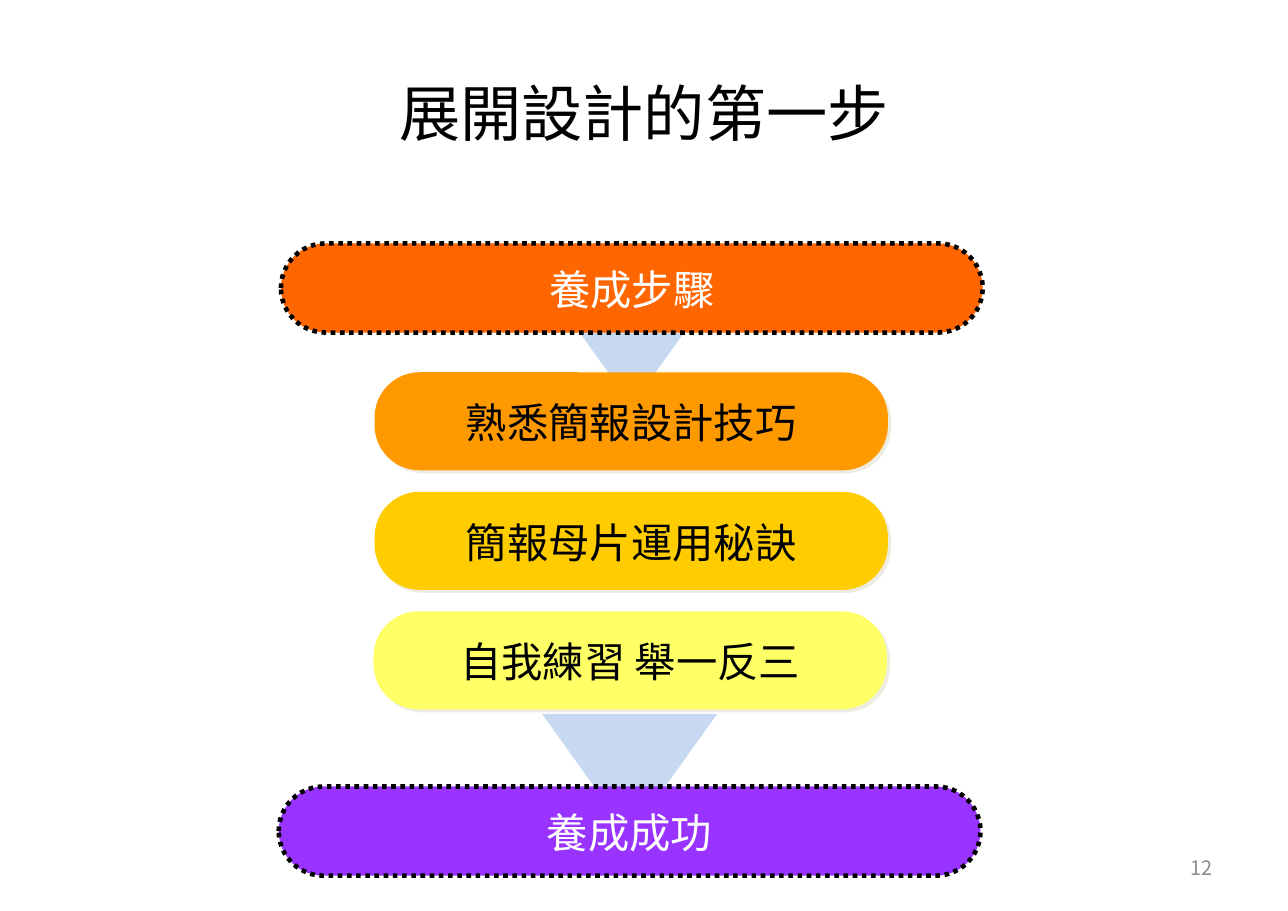
from lxml.etree import SubElement
from pptx import Presentation
from pptx.dml.color import RGBColor
from pptx.enum.dml import MSO_LINE
from pptx.enum.shapes import MSO_SHAPE
from pptx.enum.text import MSO_ANCHOR, PP_ALIGN
from pptx.oxml.ns import qn
from pptx.util import Inches, Pt

FONT = "Noto Sans CJK SC"
WIDTH, HEIGHT = Inches(11.69), Inches(8.27)
COLORS = {
    "black": "000000", "white": "FFFFFF", "gray": "8C8C8C",
    "arrow": "C6D9F1", "shadow": "EEECE1", "start": "FF6600",
    "skills": "FF9900", "master": "FFCC00", "practice": "FFFF66",
    "success": "9933FF",
}
STEPS = [
    ("熟悉簡報設計技巧", "skills", 29.08),
    ("簡報母片運用秘訣", "master", 29.08),
    ("自我練習 舉一反三", "practice", 29),
]
STEP_TOP, STEP_PITCH = 40.87, 13.12


def rgb(name):
    return RGBColor.from_string(COLORS[name])


def place(x, y, w, h):
    return [int(v * side / 100) for v, side in zip((x, y, w, h), (WIDTH, HEIGHT) * 2)]


def write(sp, text, size, color, align=PP_ALIGN.CENTER, wrap=True, spacing=None):
    tf = sp.text_frame
    frame_format = {
        "word_wrap": wrap, "vertical_anchor": MSO_ANCHOR.MIDDLE,
        "margin_left": Inches(0.11), "margin_right": Inches(0.11),
        "margin_top": Inches(0.05), "margin_bottom": Inches(0.05),
    }
    for key, value in frame_format.items():
        setattr(tf, key, value)
    p = tf.paragraphs[0]
    p.alignment = align
    p.line_spacing = spacing
    r = p.add_run()
    r.text = text
    for key, value in {"name": FONT, "size": Pt(size)}.items():
        setattr(r.font, key, value)
    r.font.color.rgb = rgb(color)
    SubElement(r.font._element, qn("a:ea"), typeface=FONT)


def add_label(s, box, *args, **kwargs):
    write(s.shapes.add_textbox(*place(*box)), *args, **kwargs)


def add_block(s, kind, box, fill):
    sp = s.shapes.add_shape(kind, *place(*box))
    sp.fill.solid()
    sp.fill.fore_color.rgb = rgb(fill)
    sp.line.fill.background()
    sp.shadow.inherit = False
    return sp


def add_arrow(s, x, y):
    add_block(s, MSO_SHAPE.FLOWCHART_MERGE, (x, y, 13.6, 13.42), "arrow")


def add_step(s, text, fill, x, y):
    sp = add_block(s, MSO_SHAPE.ROUNDED_RECTANGLE, (x, y, 39.86, 10.76), fill)
    sp.adjustments[0] = 0.46
    effects = sp._element.spPr.find(qn("a:effectLst"))
    shadow = SubElement(effects, qn("a:outerShdw"), dist=str(Pt(2.8)),
                        dir="2700000", algn="ctr", rotWithShape="0")
    SubElement(shadow, qn("a:srgbClr"), val=COLORS["shadow"])
    write(sp, text, 27, "black", wrap=False, spacing=1.04)


def add_endpoint(s, text, fill, x, y):
    sp = add_block(s, MSO_SHAPE.ROUNDED_RECTANGLE, (x, y, 54.49, 9.79), fill)
    sp.adjustments[0] = 0.5
    sp.line.color.rgb = rgb("black")
    for key, value in {"width": Pt(3), "dash_style": MSO_LINE.ROUND_DOT}.items():
        setattr(sp.line, key, value)
    write(sp, text, 27, "white", spacing=1.04)


def main():
    prs = Presentation()
    prs.slide_width, prs.slide_height = WIDTH, HEIGHT
    s = prs.slides.add_slide(prs.slide_layouts[6])
    add_label(s, (4.96, 3.99, 90.08, 16.69), "展開設計的第一步", 40, "black")
    add_label(s, (71.69, 92.62, 23.35, 5.32), "12", 13, "gray", align=PP_ALIGN.RIGHT)
    add_arrow(s, 42.09, 78.36)
    add_arrow(s, 42.26, 31.08)
    for i, (text, fill, x) in enumerate(STEPS):
        add_step(s, text, fill, x, STEP_TOP + i * STEP_PITCH)
    add_endpoint(s, "養成成功", "success", 21.64, 86.34)
    add_endpoint(s, "養成步驟", "start", 21.81, 26.72)
    prs.save("out.pptx")


if __name__ == "__main__":
    main()
